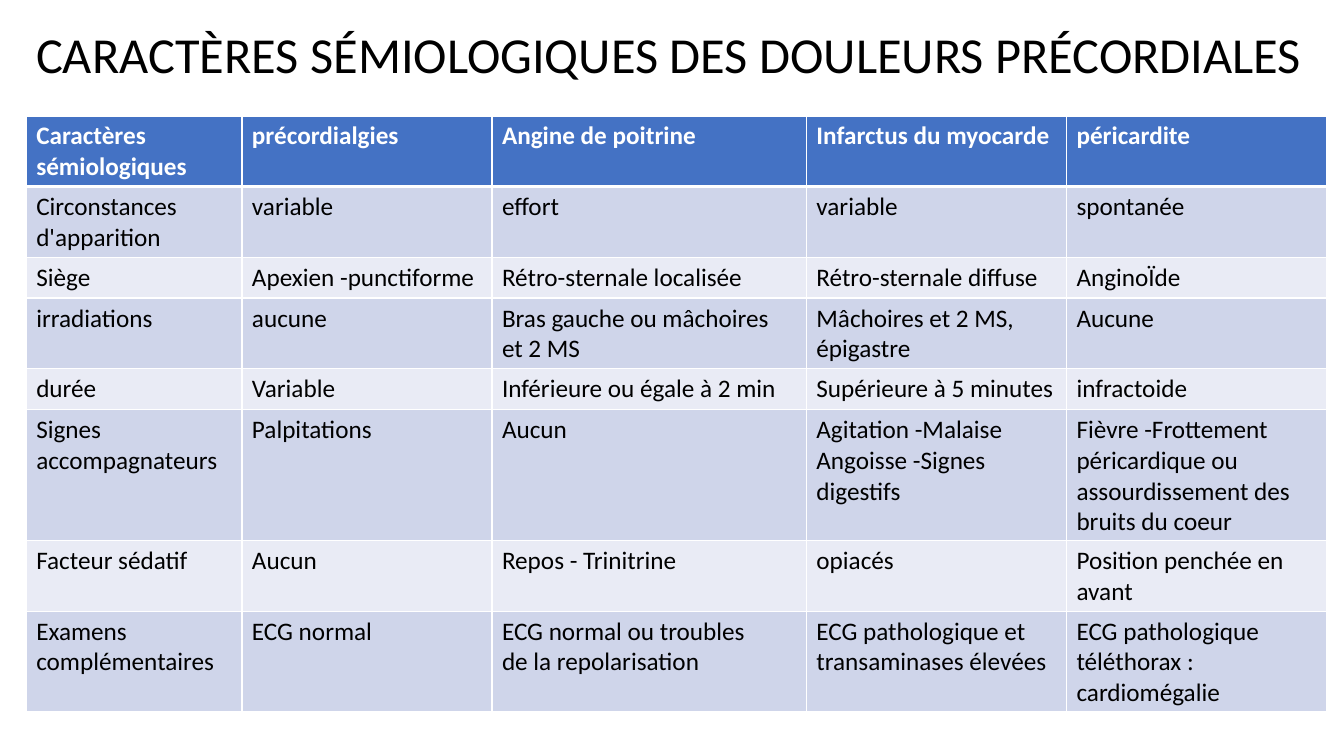
from lxml import etree
from pptx import Presentation, util as u
from pptx.dml.color import RGBColor
from pptx.enum import text
from pptx.oxml import ns

COLORS = {
    "text": "000000",
    "header_text": "FFFFFF",
    "header": "4472C4",
    "odd_row": "CFD5EA",
    "even_row": "E9EBF5",
    "border": "FFFFFF",
}
TITLE = "CARACTÈRES SÉMIOLOGIQUES DES DOULEURS PRÉCORDIALES"
COLUMN_WIDTHS = [154.1, 178.6, 224.6, 185.8, 185.8]
MIN_ROW_HEIGHT = 29.2
# A line break inside a cell starts a new paragraph.
PAIN_TABLE = [
    ["Caractères\nsémiologiques", "précordialgies", "Angine de poitrine",
     "Infarctus du myocarde", "péricardite"],
    ["Circonstances\nd'apparition", "variable", "effort", "variable", "spontanée"],
    ["Siège", "Apexien -punctiforme", "Rétro-sternale localisée",
     "Rétro-sternale diffuse", "AnginoÏde"],
    ["irradiations", "aucune", "Bras gauche ou mâchoires\net 2 MS",
     "Mâchoires et 2 MS,\népigastre", "Aucune"],
    ["durée", "Variable", "Inférieure ou égale à 2 min",
     "Supérieure à 5 minutes", "infractoide"],
    ["Signes accompagnateurs", "Palpitations", "Aucun",
     "Agitation -Malaise\nAngoisse -Signes digestifs",
     "Fièvre -Frottement\npéricardique ou\nassourdissement des bruits du coeur"],
    ["Facteur sédatif", "Aucun", "Repos - Trinitrine", "opiacés",
     "Position penchée en avant"],
    ["Examens complémentaires", "ECG normal",
     "ECG normal ou troubles\nde la repolarisation",
     "ECG pathologique et\ntransaminases élevées",
     "ECG pathologique\ntéléthorax : cardiomégalie"],
]


class SlideBuilder:
    font = "Calibri"
    title_size = 36
    cell_size = 18

    def __init__(self, slide):
        self.slide = slide

    def add_lines(self, frame, content, size, color, bold=False):
        """Fill a text frame, one paragraph per line of content."""
        for index, line in enumerate(content.split("\n")):
            paragraph = frame.add_paragraph() if index else frame.paragraphs[0]
            run = paragraph.add_run()
            run.text = line
            run.font.name = self.font
            run.font.size = u.Pt(size)
            run.font.bold = bold
            run.font.color.rgb = RGBColor.from_string(COLORS[color])

    def title(self, content, left, top, width, height):
        box = self.slide.shapes.add_textbox(*map(u.Pt, (left, top, width, height)))
        frame = box.text_frame
        frame.word_wrap = True
        frame.vertical_anchor = text.MSO_ANCHOR.MIDDLE
        self.add_lines(frame, content, self.title_size, "text")
        frame.paragraphs[0].line_spacing = 0.9

    def borders(self, cell, top, bottom):
        properties = cell._tc.get_or_add_tcPr()
        for side, width in (("L", 1), ("R", 1), ("T", top), ("B", bottom)):
            line = etree.SubElement(properties, ns.qn(f"a:ln{side}"), w=str(u.Pt(width)))
            fill = etree.SubElement(line, ns.qn("a:solidFill"))
            etree.SubElement(fill, ns.qn("a:srgbClr"), val=COLORS["border"])

    def table(self, rows, left, top, widths, row_height):
        size = sum(widths), row_height * len(rows)
        table = self.slide.shapes.add_table(
            len(rows), len(widths), *map(u.Pt, (left, top, *size))).table
        for column, width in zip(table.columns, widths):
            column.width = u.Pt(width)
        for row_index, row in enumerate(rows):
            is_header = row_index == 0
            band = "header" if is_header else "odd_row" if row_index % 2 else "even_row"
            for column_index, content in enumerate(row):
                cell = table.cell(row_index, column_index)
                self.borders(cell, top=3 if row_index == 1 else 1,
                             bottom=3 if is_header else 1)
                cell.fill.solid()
                cell.fill.fore_color.rgb = RGBColor.from_string(COLORS[band])
                self.add_lines(cell.text_frame, content, self.cell_size,
                               "header_text" if is_header else "text", bold=is_header)


def main():
    presentation = Presentation()
    presentation.slide_width = u.Pt(960)
    presentation.slide_height = u.Pt(540)
    builder = SlideBuilder(presentation.slides.add_slide(presentation.slide_layouts[6]))
    builder.title(TITLE, 18.7, 10.1, 922.3, 61.2)
    builder.table(PAIN_TABLE, 18.7, 82.8, COLUMN_WIDTHS, MIN_ROW_HEIGHT)
    presentation.save("out.pptx")


if __name__ == "__main__":
    main()
